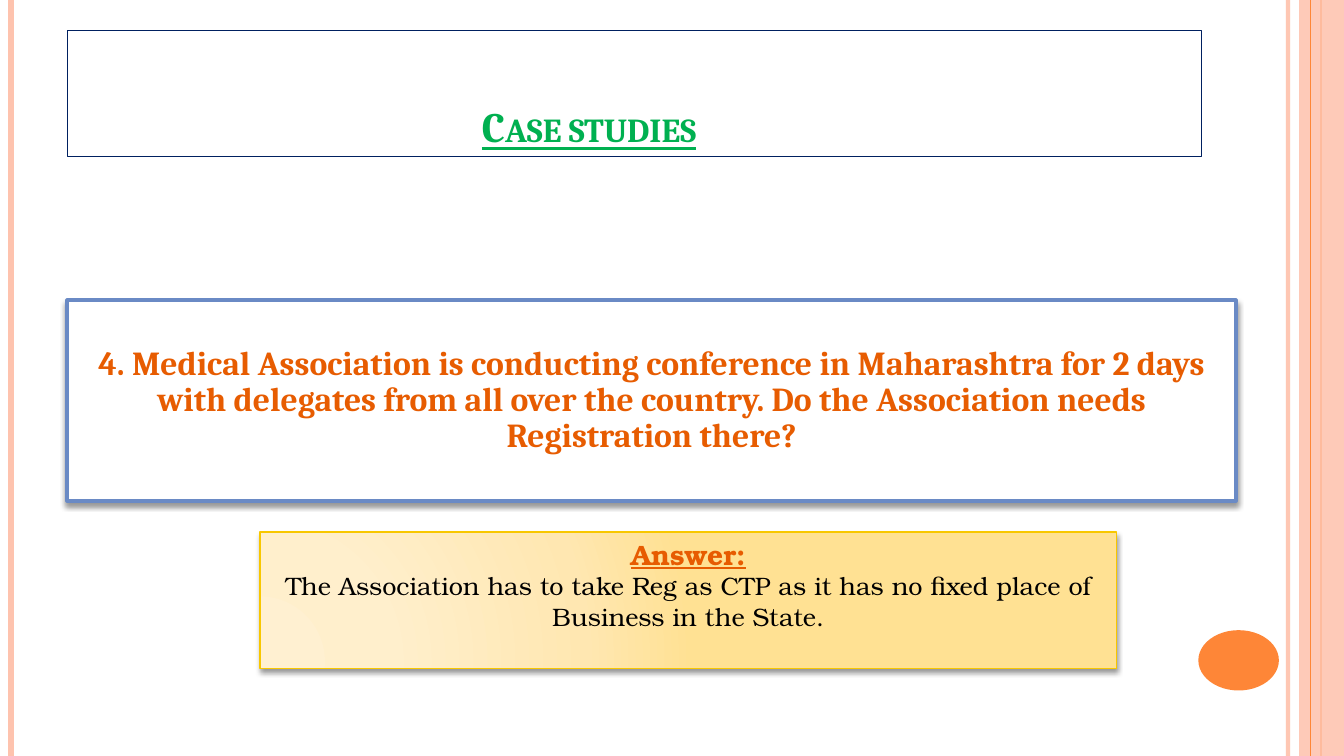
"""Build the case study slide with its question and answer boxes."""
from dataclasses import dataclass

from lxml.etree import SubElement
from pptx import Presentation
from pptx.dml.color import RGBColor
from pptx.enum.shapes import MSO_CONNECTOR, MSO_SHAPE
from pptx.enum.text import MSO_ANCHOR, PP_ALIGN
from pptx.oxml import parse_xml
from pptx.oxml.ns import nsdecls, qn
from pptx.util import Cm, Pt


@dataclass(frozen=True)
class Theme:
    peach: str = "FEC3AE"
    orange: str = "FE8637"
    navy: str = "002060"
    blue: str = "6A8AC5"
    gold: str = "F8C700"
    green: str = "00B050"
    rust: str = "E75C01"
    black: str = "000000"
    white: str = "FFFFFF"
    glow: tuple = ((0, "FFF0D1"), (30, "FFEFCC"), (75, "FFE7B1"), (100, "FFE193"))
    serif: str = "Cambria"
    book: str = "TeX Gyre Bonum"
    title: float = 30
    question: float = 24
    label: float = 20
    answer: float = 18


T = Theme()
HEIGHT = 19.05


def rgb(code):
    return RGBColor.from_string(code)


def set_alpha(el, percent):
    for clr in el.iter(qn("a:srgbClr")):
        SubElement(clr, qn("a:alpha")).set("val", str(percent * 1000))


def add_rule(s, x, color, width, alpha=100):
    c = s.shapes.add_connector(MSO_CONNECTOR.STRAIGHT, Cm(x), Cm(0), Cm(x), Cm(HEIGHT))
    c.line.color.rgb = rgb(color)
    c.line.width = Pt(width)
    if alpha < 100:
        set_alpha(c.line._get_or_add_ln(), alpha)
    SubElement(c._element.spPr, qn("a:effectLst"))


def add_box(s, kind, at, fill=None, line=None, width=1.0):
    sp = s.shapes.add_shape(kind, *map(Cm, at))
    sp.shadow.inherit = False
    if fill:
        sp.fill.solid()
        sp.fill.fore_color.rgb = rgb(fill)
    else:
        sp.fill.background()
    if line:
        sp.line.color.rgb = rgb(line)
        sp.line.width = Pt(width)
    else:
        sp.line.fill.background()
    return sp


def add_shadow(sp):
    effects = sp._element.spPr.find(qn("a:effectLst"))
    effects.append(parse_xml(
        f'<a:outerShdw {nsdecls("a")} blurRad="{Pt(4)}" dist="{Pt(2)}" dir="5400000" '
        f'rotWithShape="0"><a:srgbClr val="{T.black}"/></a:outerShdw>'))
    set_alpha(effects, 40)


def add_glow(sp):
    stops = "".join(f'<a:gs pos="{pos * 1000}"><a:srgbClr val="{color}"/></a:gs>'
                    for pos, color in T.glow)
    spPr = sp._element.spPr
    spPr.replace(spPr.find(qn("a:noFill")), parse_xml(
        f'<a:gradFill {nsdecls("a")} rotWithShape="1"><a:gsLst>{stops}</a:gsLst>'
        '<a:path path="circle"><a:fillToRect l="5000" t="100000" r="120000" b="10000"/>'
        '</a:path></a:gradFill>'))


def set_frame(sp, **values):
    for name, value in {"word_wrap": True, **values}.items():
        setattr(sp.text_frame, name, value)


def write(p, text, color, spacing=None, **values):
    p.alignment = PP_ALIGN.CENTER
    p.line_spacing = spacing
    r = p.add_run()
    r.text = text
    r.font.color.rgb = rgb(color)
    for name, value in values.items():
        setattr(r.font, name, value)
    return r


def add_frame(s):
    add_rule(s, 32.46, T.peach, 3, 93)
    add_rule(s, 0.28, T.peach, 4.5)
    add_rule(s, 33.3, T.orange, 1.5)
    band = add_box(s, MSO_SHAPE.RECTANGLE, (32.74, 0, 1.13, HEIGHT), T.peach)
    set_alpha(band._element.spPr, 87)
    add_rule(s, 33.02, T.orange, 0.75)
    add_box(s, MSO_SHAPE.OVAL, (30.2, 15.88, 2.03, 1.52), T.orange)


def add_title(s, text):
    sp = add_box(s, MSO_SHAPE.RECTANGLE, (1.7, 0.76, 28.58, 3.18), None, T.navy, 0.75)
    set_frame(sp, vertical_anchor=MSO_ANCHOR.BOTTOM, margin_right=Cm(2.54))
    r = write(sp.text_frame.paragraphs[0], text, T.green, size=Pt(T.title),
              name=T.serif, bold=True, underline=True)
    r._r.get_or_add_rPr().set("cap", "small")


def add_question(s, text):
    sp = add_box(s, MSO_SHAPE.RECTANGLE, (1.7, 7.57, 29.44, 5.05), T.white, T.blue, 2.75)
    add_shadow(sp)
    sides = ("left", "top", "right", "bottom")
    set_frame(sp, vertical_anchor=MSO_ANCHOR.MIDDLE,
              **{f"margin_{side}": Cm(0.05) for side in sides})
    write(sp.text_frame.paragraphs[0], text, T.rust, 0.9, size=Pt(T.question),
          name=T.serif, bold=True)


def add_answer(s, label, text):
    sp = add_box(s, MSO_SHAPE.RECTANGLE, (6.55, 13.41, 21.59, 3.43), None, T.gold)
    add_glow(sp)
    add_shadow(sp)
    set_frame(sp, vertical_anchor=MSO_ANCHOR.TOP)
    tf = sp.text_frame
    write(tf.paragraphs[0], label, T.rust, size=Pt(T.label), name=T.book,
          bold=True, underline=True)
    write(tf.add_paragraph(), text, T.black, size=Pt(T.answer), name=T.book)


def main():
    prs = Presentation()
    prs.slide_width, prs.slide_height = Cm(33.87), Cm(HEIGHT)
    s = prs.slides.add_slide(prs.slide_layouts[6])
    add_frame(s)
    add_title(s, "Case studies")
    add_question(s, "4. Medical Association is conducting conference in Maharashtra for "
                    "2 days with delegates from all over the country. Do the Association "
                    "needs Registration there?")
    add_answer(s, "Answer:", "The Association has to take Reg as CTP as it has no fixed "
                             "place of Business in the State.")
    prs.save("out.pptx")


if __name__ == "__main__":
    main()
